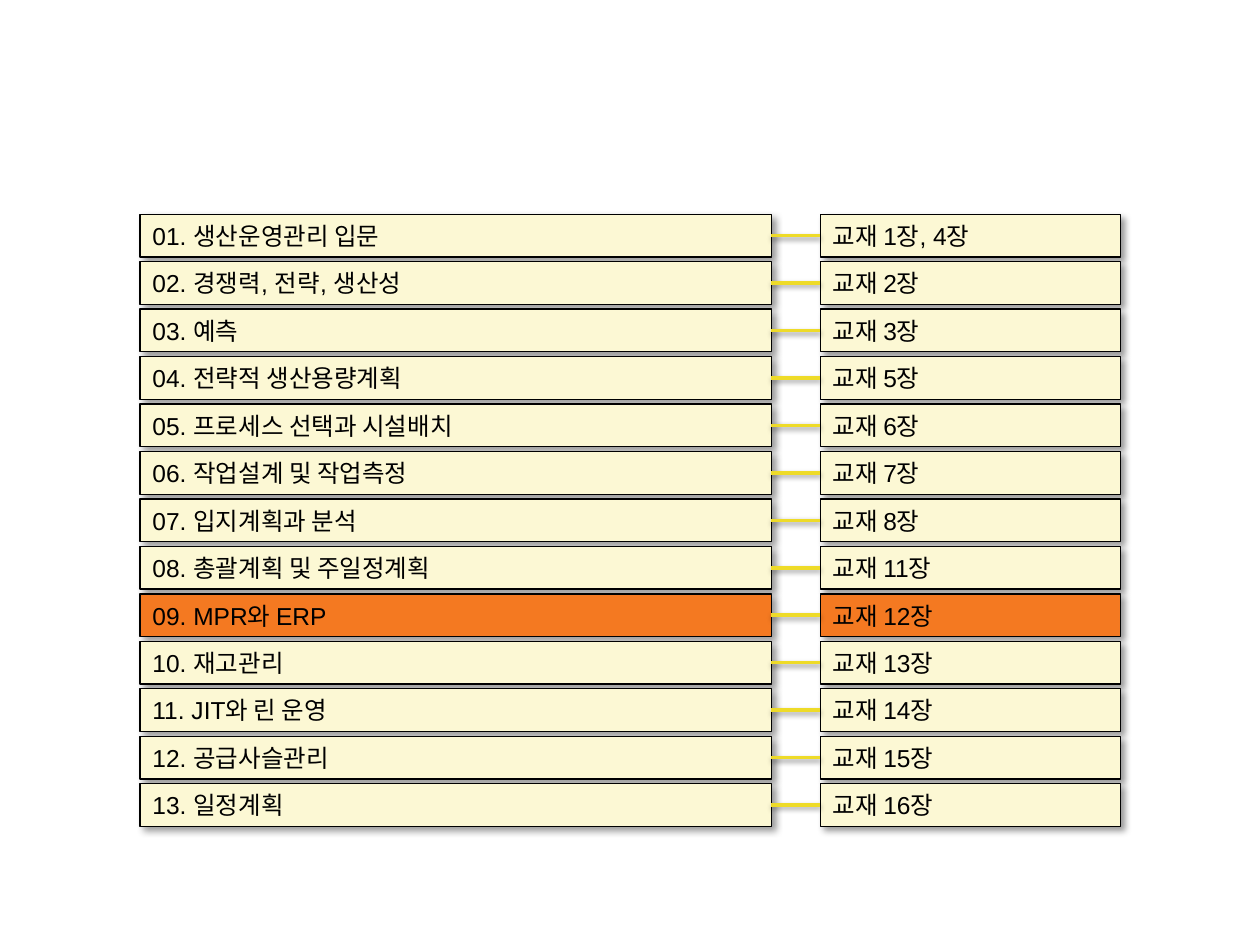
from lxml import etree
from pptx import Presentation
from pptx.dml.color import RGBColor
from pptx.enum.shapes import MSO_CONNECTOR, MSO_SHAPE
from pptx.enum.text import MSO_ANCHOR, MSO_AUTO_SIZE, PP_ALIGN
from pptx.oxml.ns import qn
from pptx.util import Pt

RECT = MSO_SHAPE.RECTANGLE
LINE = MSO_CONNECTOR.STRAIGHT
LEFT = PP_ALIGN.LEFT
MID = MSO_ANCHOR.MIDDLE
GROW = MSO_AUTO_SIZE.SHAPE_TO_FIT_TEXT

THEME = {
    "font": "Arial",
    "size": Pt(14),
    "ink": RGBColor.from_string("000000"),
    "plain": RGBColor.from_string("FCF8D4"),
    "focus": RGBColor.from_string("F47921"),
    "link": RGBColor.from_string("EEDB28"),
}

# Course topics with their textbook chapters
ROWS = [
    ("01. 생산운영관리 입문", "교재 1장, 4장"),
    ("02. 경쟁력, 전략, 생산성", "교재 2장"),
    ("03. 예측", "교재 3장"),
    ("04. 전략적 생산용량계획", "교재 5장"),
    ("05. 프로세스 선택과 시설배치", "교재 6장"),
    ("06. 작업설계 및 작업측정", "교재 7장"),
    ("07. 입지계획과 분석", "교재 8장"),
    ("08. 총괄계획 및 주일정계획", "교재 11장"),
    ("09. MPR와 ERP", "교재 12장"),
    ("10. 재고관리", "교재 13장"),
    ("11. JIT와 린 운영", "교재 14장"),
    ("12. 공급사슬관리", "교재 15장"),
    ("13. 일정계획", "교재 16장"),
]
FOCUS = 8  # row of the current topic

# Grid in points: left edge and width of each column, then the rows
COLS = [(80, 360.7), (468.7, 171.4)]
TOP, STEP, HIGH = 122.4, 27.12, 24.4


def add_shadow(item, blur, dist, angle, alpha):
    effects = etree.SubElement(item._element.spPr, qn("a:effectLst"))
    outer = etree.SubElement(
        effects, qn("a:outerShdw"), blurRad=str(Pt(blur)), dist=str(Pt(dist)),
        dir=str(angle * 60000), algn="tl", rotWithShape="0")
    color = etree.SubElement(outer, qn("a:srgbClr"), val=str(THEME["ink"]))
    etree.SubElement(color, qn("a:alpha"), val=str(alpha * 1000))


def add_box(slide, left, top, width, text, fill):
    box = slide.shapes.add_shape(RECT, Pt(left), Pt(top), Pt(width), Pt(HIGH))
    box.fill.solid()
    box.fill.fore_color.rgb = fill
    box.line.color.rgb = THEME["ink"]
    box.line.width = Pt(0.75)
    add_shadow(box, 4, 3, 45, 40)
    frame = box.text_frame
    frame.word_wrap = True
    frame.auto_size = GROW
    frame.vertical_anchor = MID
    para = frame.paragraphs[0]
    para.alignment = LEFT
    run = para.add_run()
    run.text = text
    run.font.name = THEME["font"]
    run.font.size = THEME["size"]
    run.font.color.rgb = THEME["ink"]


deck = Presentation()
deck.slide_width, deck.slide_height = Pt(720), Pt(540)
slide = deck.slides.add_slide(deck.slide_layouts[6])

# Topic column, then chapter column
for col, (left, width) in enumerate(COLS):
    for row, texts in enumerate(ROWS):
        fill = THEME["focus" if row == FOCUS else "plain"]
        add_box(slide, left, TOP + row * STEP, width, texts[col], fill)

# Links between the columns
start, end = sum(COLS[0]), COLS[1][0]
for row in range(len(ROWS)):
    mid = TOP + row * STEP + HIGH / 2
    link = slide.shapes.add_connector(LINE, Pt(start), Pt(mid), Pt(end), Pt(mid))
    link.line.color.rgb = THEME["link"]
    link.line.width = Pt(2)
    add_shadow(link, 3.1, 1.6, 90, 38)

deck.save("out.pptx")
